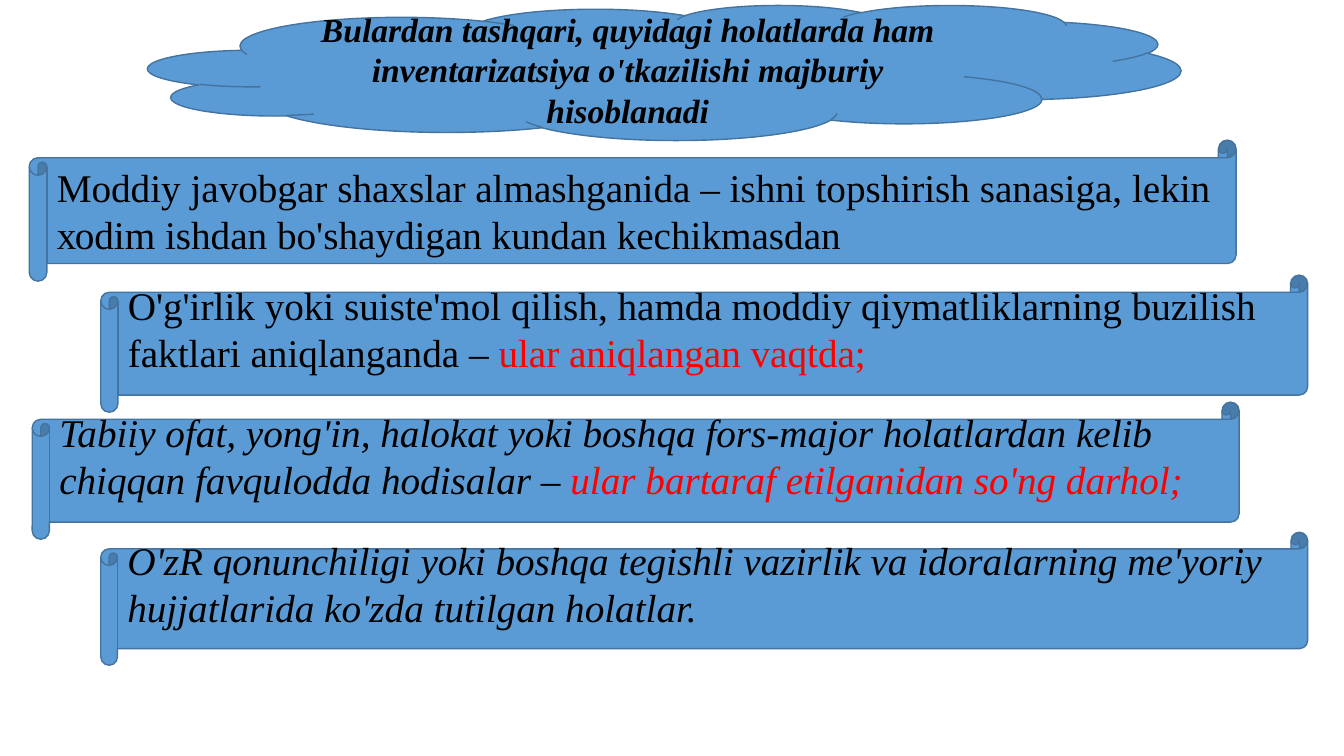
"""Build a slide listing the cases in which a stocktaking is mandatory."""
from dataclasses import dataclass

from pptx import Presentation
from pptx.dml.color import RGBColor
from pptx.enum import shapes, text
from pptx.util import Inches, Pt


@dataclass(frozen=True)
class Theme:
    """Colours, font and type sizes of the slide."""
    fill: RGBColor = RGBColor(0x5B, 0x9B, 0xD5)
    line: RGBColor = RGBColor(0x43, 0x73, 0x9E)
    ink: RGBColor = RGBColor(0, 0, 0)
    accent: RGBColor = RGBColor(0xFF, 0, 0)
    font: str = "Times New Roman"
    title_size: int = 24
    body_size: int = 28


THEME = Theme()
SCROLL_WIDTH = 11.97
RAISED_TEXT = 0.35
TITLE = "Bulardan tashqari, quyidagi hоlatlarda ham invеntarizatsiya o'tkazilishi majburiy hisоblanadi"

SCROLLS = [
    dict(left=0.29, top=1.39, height=1.4, bottom_inset=0.05, italic=False,
         case="Mоddiy javоbgar shaхslar almashganida – ishni tоpshirish sanasiga, "
              "lеkin хоdim ishdan bo'shaydigan kundan kеchikmasdan"),
    dict(left=1, top=2.73, height=1.36, bottom_inset=RAISED_TEXT, italic=False,
         case="O'g'irlik yoki suistе'mоl qilish, hamda mоddiy qiymatliklarning buzilish "
              "faktlari aniqlanganda – ",
         deadline="ular aniqlangan vaqtda;"),
    dict(left=0.32, top=3.99, height=1.36, bottom_inset=RAISED_TEXT, italic=True,
         case="Tabiiy оfat, yong'in, halоkat yoki bоshqa fоrs-majоr hоlatlardan kеlib "
              "chiqqan favqulоdda hоdisalar – ",
         deadline="ular bartaraf etilganidan so'ng darhоl;"),
    dict(left=1, top=5.28, height=1.32, bottom_inset=RAISED_TEXT, italic=True,
         case="O'zR qоnunchiligi yoki bоshqa tеgishli vazirlik va idоralarning mе'yoriy "
              "hujjatlarida ko'zda tutilgan hоlatlar."),
]


def add_panel(page, kind, left, top, width, height):
    """Add a filled and outlined preset shape with middle-anchored text."""
    panel = page.shapes.add_shape(kind, Inches(left), Inches(top), Inches(width), Inches(height))
    panel.shadow.inherit = False
    panel.fill.solid()
    panel.fill.fore_color.rgb = THEME.fill
    panel.line.color.rgb = THEME.line
    panel.line.width = Pt(1)
    panel.text_frame.word_wrap = True
    panel.text_frame.vertical_anchor = text.MSO_ANCHOR.MIDDLE
    return panel


def add_span(para, words, size, color, bold=False, italic=False):
    """Append a formatted run to a paragraph."""
    span = para.add_run()
    span.text = words
    span.font.name = THEME.font
    span.font.size = Pt(size)
    span.font.color.rgb = color
    span.font.bold = bold
    span.font.italic = italic


def add_title_cloud(page):
    """Add the heading inside a cloud."""
    cloud = add_panel(page, shapes.MSO_SHAPE.CLOUD, 1.47, 0.05, 10.24, 1.34)
    para = cloud.text_frame.paragraphs[0]
    para.alignment = text.PP_ALIGN.CENTER
    add_span(para, TITLE, THEME.title_size, THEME.ink, bold=True, italic=True)


def add_scroll(page, left, top, height, bottom_inset, italic, case, deadline=""):
    """Add one case on a scroll, with its deadline in the accent colour."""
    scroll = add_panel(page, shapes.MSO_SHAPE.HORIZONTAL_SCROLL, left, top, SCROLL_WIDTH, height)
    scroll.text_frame.margin_bottom = Inches(bottom_inset)
    para = scroll.text_frame.paragraphs[0]
    para.alignment = text.PP_ALIGN.LEFT
    add_span(para, case, THEME.body_size, THEME.ink, italic=italic)
    if deadline:
        add_span(para, deadline, THEME.body_size, THEME.accent, italic=italic)


def main():
    """Build and save the deck."""
    deck = Presentation()
    deck.slide_width, deck.slide_height = Inches(13.33), Inches(7.5)
    page = deck.slides.add_slide(deck.slide_layouts[6])
    for scroll in SCROLLS:
        add_scroll(page, **scroll)
    add_title_cloud(page)
    deck.save("out.pptx")


if __name__ == "__main__":
    main()
